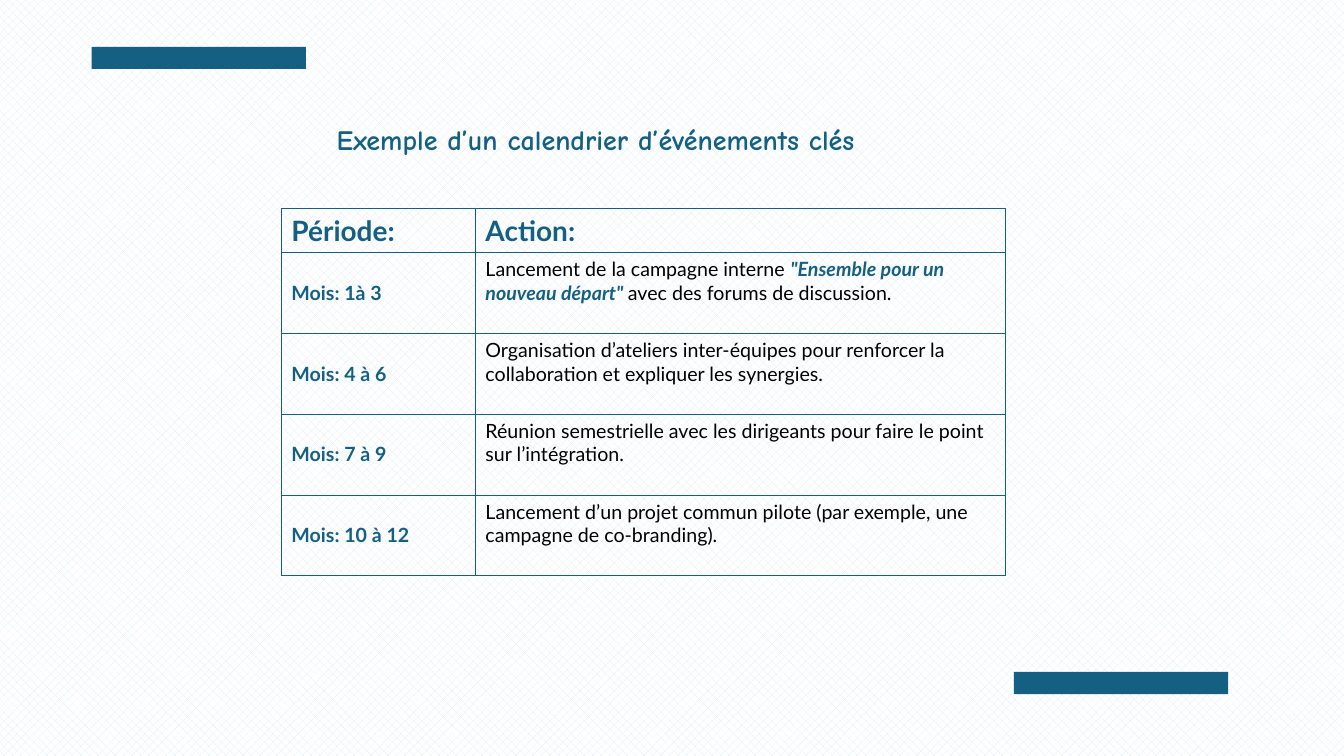
from lxml import etree
from pptx import Presentation
from pptx.dml.color import RGBColor
from pptx.enum.dml import MSO_PATTERN
from pptx.enum.shapes import MSO_SHAPE
from pptx.enum.text import MSO_ANCHOR, MSO_AUTO_SIZE, PP_ALIGN
from pptx.oxml.ns import qn
from pptx.util import Cm, Pt

RECT = MSO_SHAPE.RECTANGLE
TOP, MIDDLE = MSO_ANCHOR.TOP, MSO_ANCHOR.MIDDLE
LEFT = PP_ALIGN.LEFT
DOTS = MSO_PATTERN(6)  # the 40 percent pattern, whose member name is misspelt in python-pptx
NO_FIT = MSO_AUTO_SIZE.NONE

BLUE, BLACK, PALE, WHITE = "156082", "000000", "DCEAF7", "FFFFFF"
HEADINGS = ("Période:", "Action:")
# Each action is a list of (text, emphasised) pieces.
CALENDAR = [
    ("Mois: 1à 3", [("Lancement de la campagne interne ", False),
                    ("\"Ensemble pour un nouveau départ\" ", True),
                    ("avec des forums de discussion.", False)]),
    ("Mois: 4 à 6", [("Organisation d’ateliers inter-équipes pour renforcer la "
                      "collaboration et expliquer les synergies.", False)]),
    ("Mois: 7 à 9", [("Réunion semestrielle avec les dirigeants pour faire le point "
                      "sur l’intégration.", False)]),
    ("Mois: 10 à 12", [("Lancement d’un projet commun pilote (par exemple, une "
                        "campagne de co-branding).", False)]),
]


def rgb(value):
    return RGBColor.from_string(value)


def set_background(s):
    fill = s.background.fill
    fill.patterned()
    fill.pattern = DOTS
    fill.fore_color.rgb = rgb(PALE)
    fill.back_color.rgb = rgb(WHITE)


def add_bar(s, left, top, width, height):
    sp = s.shapes.add_shape(RECT, left, top, width, height)
    sp.shadow.inherit = False
    sp.fill.solid()
    sp.fill.fore_color.rgb = rgb(BLUE)
    sp.line.fill.background()


def style_font(font, size, name, color=BLUE, bold=True):
    font.size = Pt(size)
    font.name = name
    font.bold = bold
    font.color.rgb = rgb(color)


def set_title(s, left, top, width, height):
    sp = s.shapes.title
    sp.left, sp.top, sp.width, sp.height = left, top, width, height
    tf = sp.text_frame
    tf.text = "Exemple d’un calendrier d’événements clés"
    tf.auto_size = NO_FIT
    tf.vertical_anchor = TOP
    p = tf.paragraphs[0]
    p.alignment = LEFT
    style_font(p.font, 20, "Comic Neue")


def set_borders(cell):
    tc_pr = cell._tc.get_or_add_tcPr()
    for i, side in enumerate(("a:lnL", "a:lnR", "a:lnT", "a:lnB")):
        ln = etree.Element(qn(side), w=str(Pt(0.25)))
        fill = etree.SubElement(ln, qn("a:solidFill"))
        etree.SubElement(fill, qn("a:srgbClr"), val=BLUE)
        tc_pr.insert(i, ln)


def fill_cell(cell, pieces, size, color=BLUE, bold=True, anchor=MIDDLE):
    cell.fill.background()
    set_borders(cell)
    cell.vertical_anchor = anchor
    p = cell.text_frame.paragraphs[0]
    style_font(p.font, size, "Lato", color, bold)
    for text, emphasised in pieces:
        r = p.add_run()
        r.text = text
        style_font(r.font, size, "Lato", BLUE if emphasised else color, bold or emphasised)
        r.font.italic = emphasised


def add_calendar(s, left, top, width, height):
    table = s.shapes.add_table(len(CALENDAR) + 1, 2, left, top, width, height).table
    table.first_row = table.horz_banding = False
    period_width, heading_height = Cm(4.89), Cm(1.11)
    table.columns[0].width = period_width
    table.columns[1].width = width - period_width
    for row in table.rows:
        row.height = (height - heading_height) // len(CALENDAR)
    table.rows[0].height = heading_height

    for col, heading in enumerate(HEADINGS):
        fill_cell(table.cell(0, col), [(heading, False)], 20)
    for row, (period, action) in enumerate(CALENDAR, 1):
        fill_cell(table.cell(row, 0), [(period, False)], 14)
        fill_cell(table.cell(row, 1), action, 14, BLACK, False, TOP)


def main():
    prs = Presentation()
    prs.slide_width, prs.slide_height = Cm(33.87), Cm(19.05)
    s = prs.slides.add_slide(prs.slide_layouts[5])
    set_background(s)
    add_calendar(s, Cm(7.09), Cm(5.25), Cm(18.24), Cm(9.25))
    set_title(s, Cm(8.23), Cm(2.97), Cm(15.09), Cm(1.7))
    for left, top in ((Cm(2.31), Cm(1.18)), (Cm(25.55), Cm(16.93))):
        add_bar(s, left, top, Cm(5.4), Cm(0.56))
    prs.save("out.pptx")


if __name__ == "__main__":
    main()
